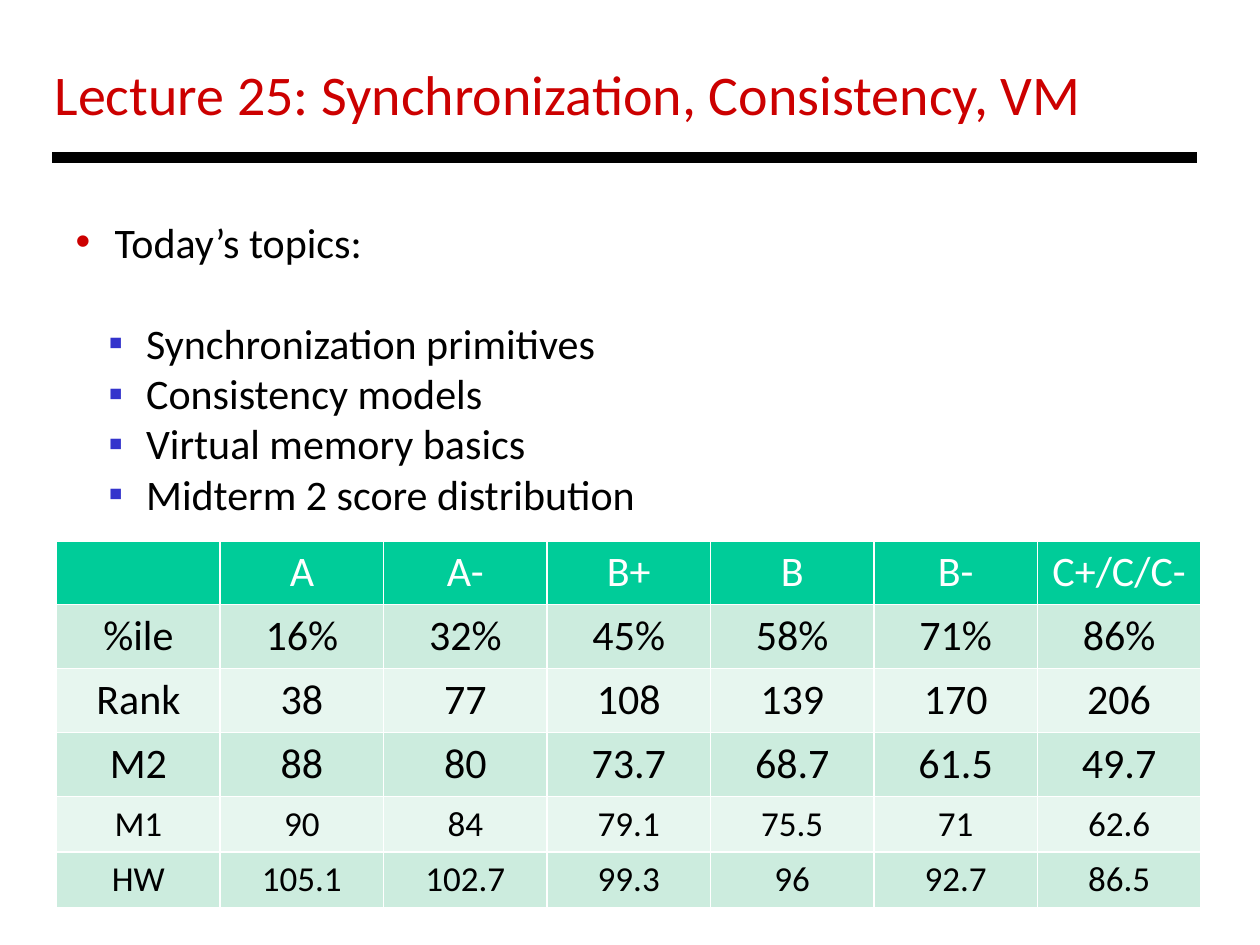
from dataclasses import dataclass

from lxml.etree import SubElement
from pptx import Presentation
from pptx.dml.color import RGBColor
from pptx.enum.shapes import MSO_CONNECTOR
from pptx.enum.text import MSO_ANCHOR, MSO_AUTO_SIZE, PP_ALIGN
from pptx.oxml.ns import qn
from pptx.util import Inches, Pt


@dataclass(frozen=True)
class Theme:
    font: str = "Calibri"
    ink: str = "000000"
    paper: str = "FFFFFF"
    title: str = "CC0000"
    sub_bullet: str = "3333CC"
    header: str = "00CC99"
    bands: tuple = ("CCECDE", "E7F6EF")
    title_size: int = 32
    body_size: int = 24
    small_size: int = 20
    line_height: float = 28.8
    rule_width: int = 6
    border_width: int = 1


THEME = Theme()
GRID_UNIT = Inches(1) / 12
SMALL_ROWS = ("M1", "HW")
TOPICS = (
    "Synchronization primitives",
    "Consistency models",
    "Virtual memory basics",
    "Midterm 2 score distribution",
)
SCORES = (
    ("", "A", "A-", "B+", "B", "B-", "C+/C/C-"),
    ("%ile", "16%", "32%", "45%", "58%", "71%", "86%"),
    ("Rank", "38", "77", "108", "139", "170", "206"),
    ("M2", "88", "80", "73.7", "68.7", "61.5", "49.7"),
    ("M1", "90", "84", "79.1", "75.5", "71", "62.6"),
    ("HW", "105.1", "102.7", "99.3", "96", "92.7", "86.5"),
)


def grid(*steps):
    return [round(step * GRID_UNIT) for step in steps]


def place(shape, *steps):
    shape.left, shape.top, shape.width, shape.height = grid(*steps)


def style(para, size, color=THEME.ink):
    for font in [para.font] + [span.font for span in para.runs]:
        font.name = THEME.font
        font.size = Pt(size)
        font.bold = False
        font.color.rgb = RGBColor.from_string(color)


def set_bullet(para, symbol, color, margin, hanging):
    properties = para._p.get_or_add_pPr()
    properties.set("marL", str(Inches(margin)))
    properties.set("indent", str(-Inches(hanging)))
    bullet_color = SubElement(properties, qn("a:buClr"))
    SubElement(bullet_color, qn("a:srgbClr"), val=color)
    SubElement(properties, qn("a:buFont"), typeface="Arial")
    SubElement(properties, qn("a:buChar"), char=symbol)


def add_title(page, text):
    box = page.shapes.title
    place(box, 4, 5, 102, 7.7)
    frame = box.text_frame
    frame.text = text
    frame.auto_size = MSO_AUTO_SIZE.NONE
    frame.vertical_anchor = MSO_ANCHOR.MIDDLE
    para = frame.paragraphs[0]
    para.alignment = PP_ALIGN.LEFT
    style(para, THEME.title_size, THEME.title)


def add_rule(page):
    rule = page.shapes.add_connector(MSO_CONNECTOR.STRAIGHT, *grid(5, 15, 114, 15))
    rule.line.color.rgb = RGBColor.from_string(THEME.ink)
    rule.line.width = Pt(THEME.rule_width)
    SubElement(rule._element.spPr, qn("a:effectLst"))


def add_topics(page, heading, topics):
    box = page.placeholders[1]
    place(box, 6, 20, 58.2, 35.2)
    frame = box.text_frame
    frame.text = "\n".join((heading, *topics))
    frame.auto_size = MSO_AUTO_SIZE.NONE
    frame.vertical_anchor = MSO_ANCHOR.TOP
    for index, para in enumerate(frame.paragraphs):
        para.level = min(index, 1)
        para.line_spacing = Pt(THEME.line_height)
        para.space_before = Pt(0)
        para.space_after = Pt(0 if index else THEME.line_height)
        if index:
            set_bullet(para, "▪", THEME.sub_bullet, 0.56, 0.3)
        else:
            set_bullet(para, "•", THEME.title, 0.31, 0.31)
        style(para, THEME.body_size)


def set_borders(cell):
    properties = cell._tc.get_or_add_tcPr()
    for index, side in enumerate(("lnL", "lnR", "lnT", "lnB")):
        border = properties.makeelement(
            qn(f"a:{side}"), {"w": str(Pt(THEME.border_width))}
        )
        fill = SubElement(border, qn("a:solidFill"))
        SubElement(fill, qn("a:srgbClr"), val=THEME.paper)
        properties.insert(index, border)


def fill_cell(cell, text, fill, color, size):
    cell.text = text
    cell.fill.solid()
    cell.fill.fore_color.rgb = RGBColor.from_string(fill)
    para = cell.text_frame.paragraphs[0]
    para.alignment = PP_ALIGN.CENTER
    style(para, size, color)
    set_borders(cell)


def add_scores(page, scores):
    columns = len(scores[0])
    frame = page.shapes.add_table(
        len(scores), columns, *grid(5.4, 51.5, 109, 34.4)
    )
    table = frame.table
    for column in table.columns:
        column.width = round(109 * GRID_UNIT / columns)
    for row_index, values in enumerate(scores):
        small = values[0] in SMALL_ROWS
        size = THEME.small_size if small else THEME.body_size
        fill = THEME.bands[(row_index - 1) % 2] if row_index else THEME.header
        color = THEME.ink if row_index else THEME.paper
        table.rows[row_index].height = Inches(0.44 if small else 0.5)
        for column_index, text in enumerate(values):
            fill_cell(table.cell(row_index, column_index), text, fill, color, size)


def main():
    deck = Presentation()
    deck.slide_width, deck.slide_height = grid(120, 90)
    page = deck.slides.add_slide(deck.slide_layouts[1])
    add_title(page, "Lecture 25: Synchronization, Consistency, VM")
    add_rule(page)
    add_topics(page, "Today’s topics:", TOPICS)
    add_scores(page, SCORES)
    deck.save("out.pptx")


if __name__ == "__main__":
    main()
